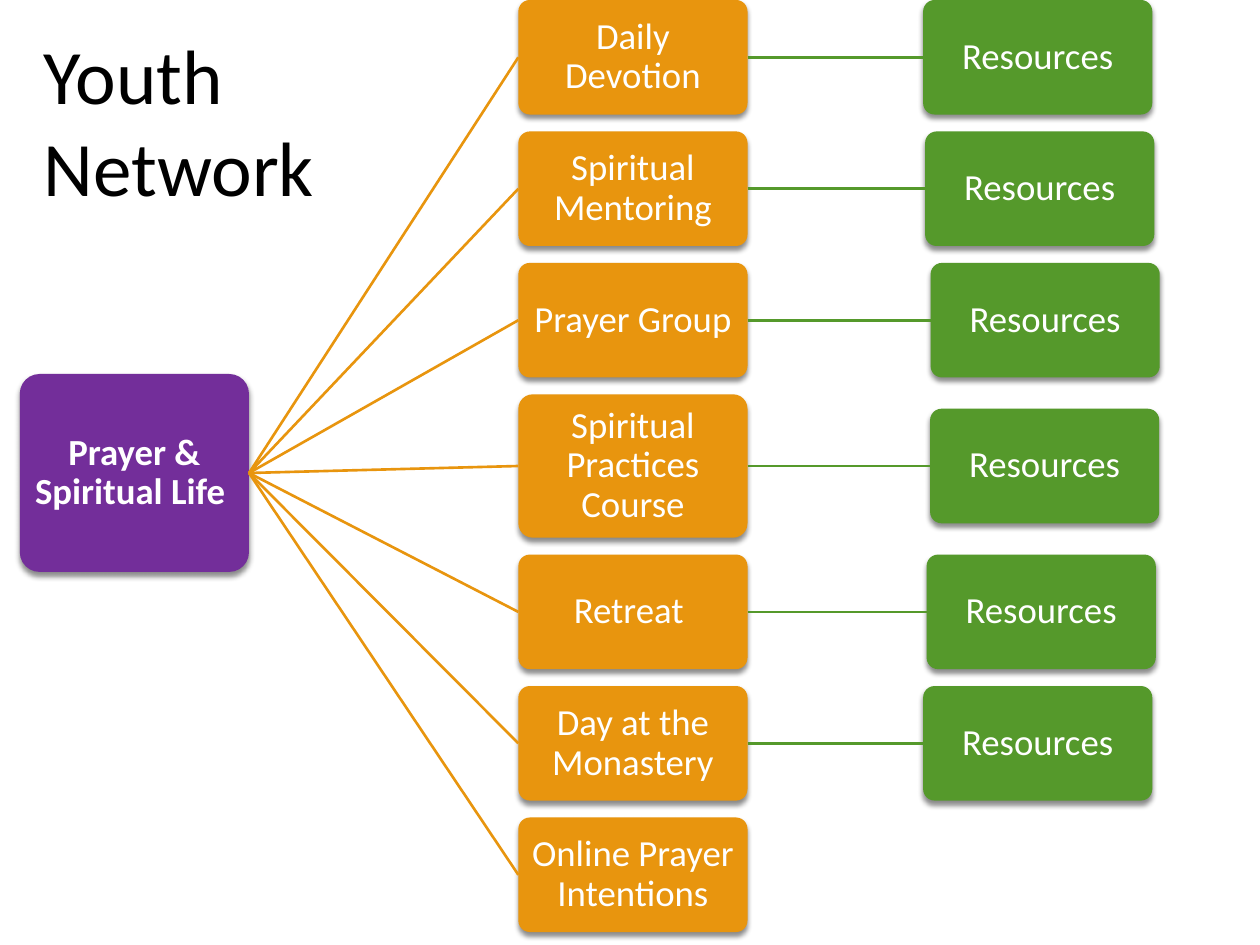
import pptx
import pptx.dml.color
import pptx.enum.shapes
import pptx.enum.text
import pptx.oxml
import pptx.oxml.ns
import pptx.util
from pptx.util import Cm, Pt

FONT = "Calibri"
PURPLE, ORANGE, GREEN = "732E9A", "E8950E", "55992B"
BOX_W, BOX_H, GAP = 4.62, 2.31, 0.34
TOPIC_LEFT = 10.45
LEFT_SITE, RIGHT_SITE = 1, 3

# Topic, box height, left edge of its resources box (None: no box)
TOPICS = [
    ("Daily Devotion", BOX_H, 18.61),
    ("Spiritual Mentoring", BOX_H, 18.65),
    ("Prayer Group", BOX_H, 18.76),
    ("Spiritual Practices Course", 2.89, 18.75),
    ("Retreat ", BOX_H, 18.68),
    ("Day at the Monastery", BOX_H, 18.61),
    ("Online Prayer Intentions", BOX_H, None),
]


def rgb(value):
    return pptx.dml.color.RGBColor.from_string(value)


def add_run(p, text, size, color, bold=False):
    r = p.add_run()
    r.text = text
    r.font.name = FONT
    r.font.size = Pt(size)
    r.font.bold = bold
    r.font.color.rgb = rgb(color)


def add_shadow(sp):
    sp.shadow.inherit = False
    effects = sp._element.spPr.find(pptx.oxml.ns.qn("a:effectLst"))
    effects.append(pptx.oxml.parse_xml(
        f'<a:outerShdw {pptx.oxml.ns.nsdecls("a")} blurRad="{Pt(3)}" '
        f'dist="{Pt(2.4)}" dir="5400000" rotWithShape="0">'
        '<a:srgbClr val="000000"><a:alpha val="45000"/></a:srgbClr>'
        '</a:outerShdw>'))


def add_box(s, text, left, top, height, color, bold=False):
    sp = s.shapes.add_shape(
        pptx.enum.shapes.MSO_SHAPE.ROUNDED_RECTANGLE,
        Cm(left), Cm(top), Cm(BOX_W), Cm(height))
    sp.adjustments[0] = 0.1
    sp.fill.solid()
    sp.fill.fore_color.rgb = rgb(color)
    sp.line.fill.background()
    add_shadow(sp)

    tf = sp.text_frame
    tf.word_wrap = True
    tf.vertical_anchor = pptx.enum.text.MSO_ANCHOR.MIDDLE
    tf.margin_left = tf.margin_right = Cm(0.1)
    tf.margin_top = tf.margin_bottom = Cm(0.1)
    p = tf.paragraphs[0]
    p.alignment = pptx.enum.text.PP_ALIGN.CENTER
    p.line_spacing = 0.9
    add_run(p, text, 21, "FFFFFF", bold)
    return sp


def add_link(s, start, end, color):
    link = s.shapes.add_connector(
        pptx.enum.shapes.MSO_CONNECTOR.STRAIGHT, 0, 0, 0, 0)
    link.begin_connect(start, RIGHT_SITE)
    link.end_connect(end, LEFT_SITE)
    link.line.color.rgb = rgb(color)
    link.line.width = Pt(1.5)
    link._element.spPr.append(pptx.oxml.parse_xml(
        f'<a:effectLst {pptx.oxml.ns.nsdecls("a")}/>'))


def add_title(s, lines):
    sp = s.shapes.title
    sp.left, sp.top, sp.width, sp.height = Cm(0.63), Cm(0.43), Cm(6.9), Cm(4)
    tf = sp.text_frame
    tf.word_wrap = True
    tf.auto_size = pptx.enum.text.MSO_AUTO_SIZE.NONE
    tf.vertical_anchor = pptx.enum.text.MSO_ANCHOR.TOP
    for i, line in enumerate(lines):
        p = tf.add_paragraph() if i else tf.paragraphs[0]
        p.alignment = pptx.enum.text.PP_ALIGN.LEFT
        add_run(p, line, 44, "000000")


def main():
    prs = pptx.Presentation()
    prs.slide_width, prs.slide_height = Cm(25.4), Cm(19.05)
    s = prs.slides.add_slide(prs.slide_layouts[5])
    add_title(s, ["Youth", "Network"])

    # Root of the tree
    root = add_box(s, "Prayer & Spiritual Life ", 0.4, 7.54, 3.99, PURPLE, True)

    # Topics, each with its resources
    top = 0
    for name, height, resource_left in TOPICS:
        topic = add_box(s, name, TOPIC_LEFT, top, height, ORANGE)
        add_link(s, root, topic, ORANGE)
        if resource_left is not None:
            resource_top = top + (height - BOX_H) / 2
            resource = add_box(
                s, "Resources", resource_left, resource_top, BOX_H, GREEN)
            add_link(s, topic, resource, GREEN)
        top += height + GAP

    prs.save("out.pptx")


if __name__ == "__main__":
    main()
